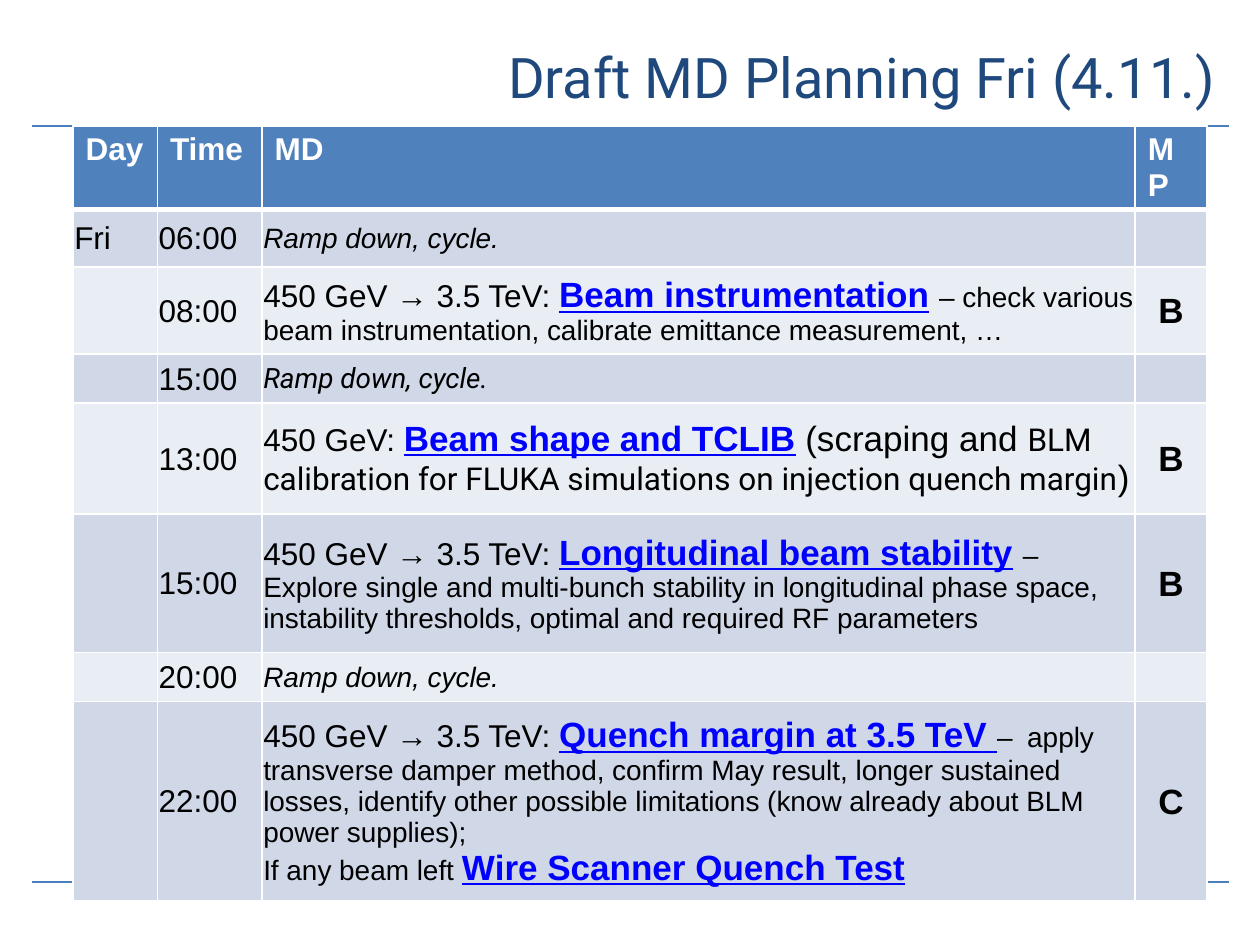
import lxml.etree
import pptx
import pptx.dml.color
import pptx.enum.shapes
import pptx.enum.text
import pptx.oxml.ns
import pptx.util

Inches = pptx.util.Inches
Pt = pptx.util.Pt
RGBColor = pptx.dml.color.RGBColor
Align = pptx.enum.text.PP_ALIGN
Anchor = pptx.enum.text.MSO_ANCHOR

NAVY = RGBColor(0x1F, 0x49, 0x7D)
RULE_BLUE = RGBColor(0x4B, 0x7E, 0xBC)
HEADER_BLUE = RGBColor(0x4F, 0x81, 0xBD)
BAND_DARK = RGBColor(0xD0, 0xD8, 0xE8)
BAND_LIGHT = RGBColor(0xE9, 0xED, 0xF4)
LINK_BLUE = RGBColor(0x00, 0x00, 0xFF)
BLACK = RGBColor(0x00, 0x00, 0x00)
WHITE = RGBColor(0xFF, 0xFF, 0xFF)

HEADINGS = ["Day", "Time", "MD", "MP"]
COLUMN_WIDTHS = [0.67, 0.83, 6.93, 0.57]
ROW_HEIGHTS = [0.43, 0.46, 0.69, 0.39, 0.88, 1.1, 0.39, 1.58]
RAMP_DOWN = [[("Ramp down, cycle.", 16, "italic")]]
RAMP_UP = ("450 GeV → 3.5 TeV: ", 18, "")

SCHEDULE = [
    ("Fri", "06:00", RAMP_DOWN, ""),
    ("", "08:00", [[
        RAMP_UP,
        ("Beam instrumentation", 20, "link"),
        (" ", 20, ""),
        ("– check various beam instrumentation, calibrate emittance measurement, …", 16, ""),
    ]], "B"),
    ("", "15:00", [[("Ramp down, cycle.", 16, "italic roboto")]], ""),
    ("", "13:00", [[
        ("450 GeV: ", 18, ""),
        ("Beam shape and TCLIB", 20, "link"),
        (" (scraping and ", 20, ""),
        ("BLM calibration for FLUKA simulations on injection quench margin", 18, "roboto"),
        (")", 20, ""),
    ]], "B"),
    ("", "15:00", [[
        RAMP_UP,
        ("Longitudinal beam stability", 20, "link"),
        (" ", 20, ""),
        ("– Explore single and multi-bunch stability in longitudinal phase space, "
         "instability thresholds, optimal and required RF parameters", 16, ""),
    ]], "B"),
    ("", "20:00", RAMP_DOWN, ""),
    ("", "22:00", [
        [
            RAMP_UP,
            ("Quench margin at 3.5 TeV ", 20, "link"),
            ("– ", 16, ""),
            (" ", 14, ""),
            ("apply transverse damper method, confirm May result, longer sustained losses, "
             "identify other possible limitations (know already about BLM power supplies);", 16, ""),
        ],
        [("If any beam left ", 16, ""), ("Wire Scanner Quench Test", 20, "link")],
    ], "C"),
]


def add_rule(page, left, right, top):
    rule = page.shapes.add_connector(
        pptx.enum.shapes.MSO_CONNECTOR.STRAIGHT, left, top, right, top)
    rule.line.color.rgb = RULE_BLUE
    rule.line.width = Pt(1.5)
    lxml.etree.SubElement(rule._element.spPr, pptx.oxml.ns.qn("a:effectLst"))


def place_title(page, left, top, width, height):
    title = page.shapes.title
    title.left, title.top, title.width, title.height = left, top, width, height
    title.text_frame.text = "Draft MD Planning Fri (4.11.)"
    title.text_frame.vertical_anchor = Anchor.MIDDLE
    para = title.text_frame.paragraphs[0]
    para.alignment = Align.RIGHT
    para.font.name = "Roboto"
    para.font.size = Pt(32)
    para.font.color.rgb = NAVY


def set_borders(cell, row):
    widths = {"L": 1, "R": 1, "T": 3 if row == 1 else 1, "B": 3 if row == 0 else 1}
    properties = cell._tc.get_or_add_tcPr()
    for index, (side, width) in enumerate(widths.items()):
        border = pptx.oxml.parse_xml(
            f'<a:ln{side} {pptx.oxml.ns.nsdecls("a")} w="{Pt(width)}">'
            f'<a:solidFill><a:srgbClr val="{WHITE}"/></a:solidFill></a:ln{side}>')
        properties.insert(index, border)


def style_cell(cell, row):
    cell.fill.solid()
    cell.fill.fore_color.rgb = HEADER_BLUE if row == 0 else BAND_DARK if row % 2 else BAND_LIGHT
    set_borders(cell, row)
    if row:
        cell.vertical_anchor = Anchor.MIDDLE
        cell.margin_left = cell.margin_top = cell.margin_right = Inches(0.01)
        cell.margin_bottom = 0


def write_label(cell, text, size, color=BLACK, bold=False, align=Align.LEFT):
    cell.text = text
    para = cell.text_frame.paragraphs[0]
    para.alignment = align
    para.font.name = "Arial"
    para.font.size = Pt(size)
    para.font.bold = bold
    para.font.color.rgb = color


def write_description(cell, lines):
    for number, pieces in enumerate(lines):
        frame = cell.text_frame
        para = frame.add_paragraph() if number else frame.paragraphs[0]
        para.alignment = Align.LEFT
        for text, size, style in pieces:
            span = para.add_run()
            span.text = text
            font = span.font
            font.name = "Roboto" if "roboto" in style else "Arial"
            font.size = Pt(size)
            font.italic = "italic" in style
            font.bold = font.underline = "link" in style
            font.color.rgb = LINK_BLUE if "link" in style else BLACK


def add_schedule(page, left, top, width, height):
    table = page.shapes.add_table(
        len(ROW_HEIGHTS), len(COLUMN_WIDTHS), left, top, width, height).table
    for column, column_width in zip(table.columns, COLUMN_WIDTHS):
        column.width = Inches(column_width)
    for number, row_height in enumerate(ROW_HEIGHTS):
        table.rows[number].height = Inches(row_height)
        for cell in table.rows[number].cells:
            style_cell(cell, number)
    for cell, heading in zip(table.rows[0].cells, HEADINGS):
        write_label(cell, heading, 18, WHITE, bold=True)
    for number, (day, time, description, protection) in enumerate(SCHEDULE, start=1):
        cells = table.rows[number].cells
        write_label(cells[0], day, 18)
        write_label(cells[1], time, 18)
        write_description(cells[2], description)
        write_label(cells[3], protection, 20, bold=True, align=Align.CENTER)


def main():
    deck = pptx.Presentation()
    deck.slide_width, deck.slide_height = Inches(10), Inches(7.5)
    page = deck.slides.add_slide(deck.slide_layouts[5])
    for top in (1, 7):
        add_rule(page, Inches(0.25), Inches(9.75), Inches(top))
    place_title(page, Inches(1.75), Inches(0.17), Inches(8), Inches(0.87))
    add_schedule(page, Inches(0.58), Inches(1), Inches(9), Inches(sum(ROW_HEIGHTS)))
    deck.save("out.pptx")


if __name__ == "__main__":
    main()
